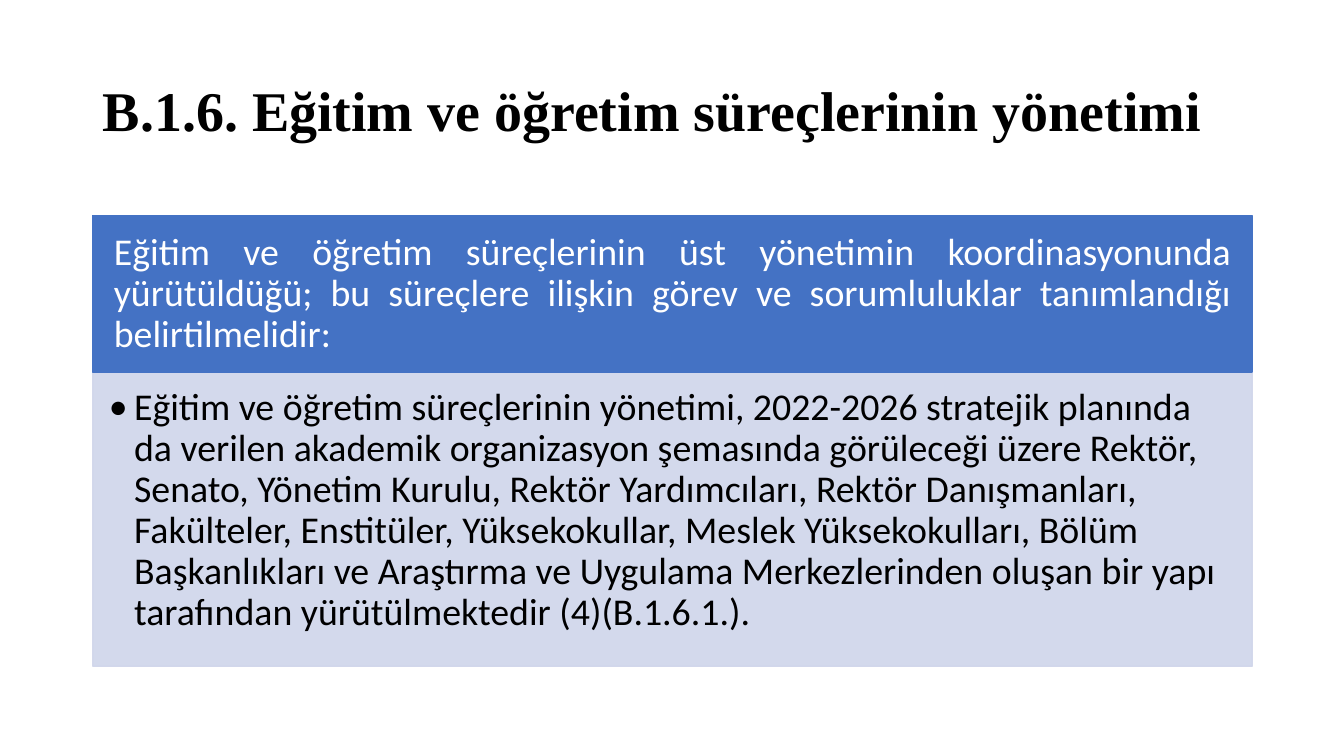
from lxml.etree import SubElement
from pptx import Presentation
from pptx.dml.color import RGBColor
from pptx.enum.shapes import MSO_SHAPE
from pptx.enum.text import MSO_ANCHOR, MSO_AUTO_SIZE, PP_ALIGN
from pptx.oxml.ns import qn
from pptx.util import Inches, Pt

COLORS = {"black": "000000", "white": "FFFFFF", "blue": "4472C4", "pale": "CFD5EA"}
LEFT, WIDTH = 0.92, 11.5

TITLE = "B.1.6. Eğitim ve öğretim süreçlerinin yönetimi"
HEADING = (
    "Eğitim ve öğretim süreçlerinin üst yönetimin koordinasyonunda yürütüldüğü; "
    "bu süreçlere ilişkin görev ve sorumluluklar tanımlandığı belirtilmelidir:"
)
DETAIL = (
    "Eğitim ve öğretim süreçlerinin yönetimi, 2022-2026 stratejik planında da verilen "
    "akademik organizasyon şemasında görüleceği üzere Rektör, Senato, Yönetim Kurulu, "
    "Rektör Yardımcıları, Rektör Danışmanları, Fakülteler, Enstitüler, Yüksekokullar, "
    "Meslek Yüksekokulları, Bölüm Başkanlıkları ve Araştırma ve Uygulama Merkezlerinden "
    "oluşan bir yapı tarafından yürütülmektedir (4)(B.1.6.1.)."
)


def place(shape, box):
    """Move a shape to a box given as left, top, width, height in inches."""
    shape.left, shape.top, shape.width, shape.height = map(Inches, box)


def write(shape, text, *, size, color, font="Calibri", bold=False, align=PP_ALIGN.LEFT,
          anchor=MSO_ANCHOR.MIDDLE, insets=(0.1, 0.05, 0.1, 0.05)):
    """Write one formatted paragraph into a shape and return it."""
    frame = shape.text_frame
    frame.word_wrap = True
    frame.auto_size = MSO_AUTO_SIZE.NONE
    frame.vertical_anchor = anchor
    (frame.margin_left, frame.margin_top,
     frame.margin_right, frame.margin_bottom) = map(Inches, insets)
    para = frame.paragraphs[0]
    para.alignment = align
    para.line_spacing = 0.9
    para.space_before = Pt(0)
    span = para.add_run()
    span.text = text
    span.font.name = font
    span.font.size = Pt(size)
    span.font.bold = bold
    span.font.color.rgb = RGBColor.from_string(COLORS[color])
    return para


def paint(shape, color, opacity=100):
    """Give a shape a fill and a matching outline of the given opacity."""
    shape.fill.solid()
    shape.line.width = Pt(1)
    shape.line.fill.solid()
    for fill in (shape.fill, shape.line.fill):
        fill.fore_color.rgb = RGBColor.from_string(COLORS[color])
    if opacity < 100:
        for tone in shape.element.spPr.iter(qn("a:srgbClr")):
            SubElement(tone, qn("a:alpha"), val=str(opacity * 1000))


def add_title(page, box):
    """Fill the title placeholder."""
    place(page.shapes.title, box)
    write(page.shapes.title, TITLE, size=40, color="black",
          font="Times New Roman", bold=True)


def add_heading(page, box):
    """Add the blue heading band."""
    band = page.shapes.add_shape(MSO_SHAPE.RECTANGLE, *map(Inches, box))
    band.shadow.inherit = False
    paint(band, "blue")
    write(band, HEADING, size=27, color="white", align=PP_ALIGN.JUSTIFY,
          insets=(0.21, 0.12, 0.21, 0.12))


def add_detail(page, box):
    """Fill the body placeholder as a pale panel with one bullet."""
    panel = page.placeholders[1]
    place(panel, box)
    paint(panel, "pale", opacity=90)
    para = write(panel, DETAIL, size=27, color="black", anchor=MSO_ANCHOR.TOP,
                 insets=(0.16, 0.16, 0.21, 0.24))
    properties = para._p.get_or_add_pPr()
    properties.set("marL", str(Inches(0.25)))
    properties.set("indent", str(Inches(-0.25)))
    SubElement(properties, qn("a:buFont"), typeface="Calibri")
    SubElement(properties, qn("a:buChar"), char="•")


def main():
    """Build the deck and save it."""
    deck = Presentation()
    deck.slide_width, deck.slide_height = Inches(13.33), Inches(7.5)
    page = deck.slides.add_slide(deck.slide_layouts[1])
    add_title(page, (LEFT, 0.4, WIDTH, 1.45))
    add_heading(page, (LEFT, 2.14, WIDTH, 1.55))
    add_detail(page, (LEFT, 3.69, WIDTH, 2.92))
    deck.save("out.pptx")


if __name__ == "__main__":
    main()
